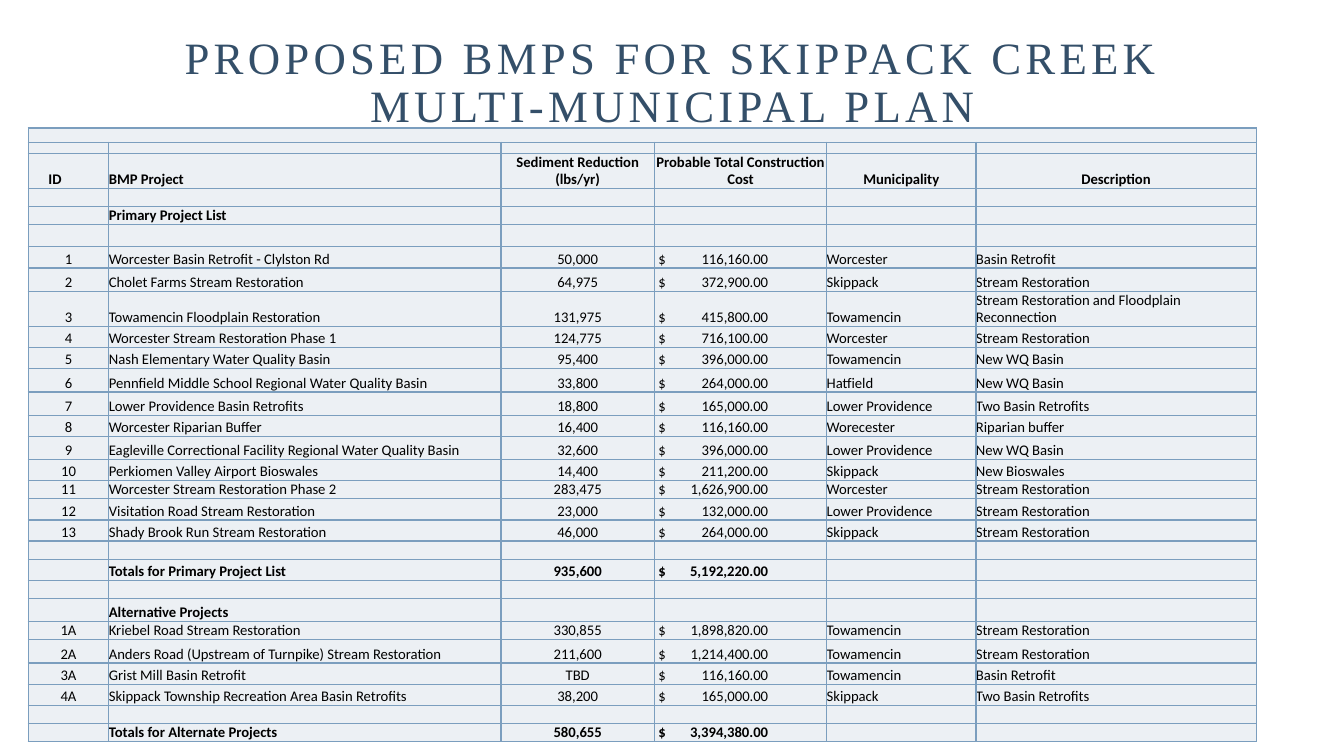
from lxml import etree
from pptx import Presentation
from pptx import util as u
from pptx.dml.color import RGBColor
from pptx.enum import text
from pptx.oxml import ns

COLORS = {"title": "344F69", "ink": "000000", "cell": "ECF0F4", "border": "7B9EBE"}
COLUMN_WIDTHS = [0.8, 3.89, 1.52, 1.71, 1.48, 2.78]
ID, PROJECT, SEDIMENT, COST, MUNICIPALITY, DESCRIPTION = range(6)
HEADER_ROW = 2

# Row height, then the texts of the row from the left
ROWS = [
    (0.14,),
    (0.11,),
    (0.35, "ID", "BMP Project", "Sediment Reduction (lbs/yr)",
     "Probable Total Construction Cost", "Municipality", "Description"),
    (0.18,),
    (0.18, "", "Primary Project List"),
    (0.22,),
    (0.21, "1", "Worcester Basin Retrofit - Clylston Rd", "50,000",
     "116,160.00", "Worcester", "Basin Retrofit"),
    (0.23, "2", "Cholet Farms Stream Restoration", "64,975",
     "372,900.00", "Skippack", "Stream Restoration"),
    (0.35, "3", "Towamencin Floodplain Restoration", "131,975",
     "415,800.00", "Towamencin", "Stream Restoration and Floodplain Reconnection"),
    (0.21, "4", "Worcester Stream Restoration Phase 1", "124,775",
     "716,100.00", "Worcester", "Stream Restoration"),
    (0.21, "5", "Nash Elementary Water Quality Basin", "95,400",
     "396,000.00", "Towamencin", "New WQ Basin"),
    (0.23, "6", "Pennfield Middle School Regional Water Quality Basin", "33,800",
     "264,000.00", "Hatfield", "New WQ Basin"),
    (0.23, "7", "Lower Providence Basin Retrofits", "18,800",
     "165,000.00", "Lower Providence", "Two Basin Retrofits"),
    (0.21, "8", "Worcester Riparian Buffer", "16,400",
     "116,160.00", "Worecester", "Riparian buffer"),
    (0.23, "9", "Eagleville Correctional Facility Regional Water Quality Basin",
     "32,600", "396,000.00", "Lower Providence", "New WQ Basin"),
    (0.21, "10", "Perkiomen Valley Airport Bioswales", "14,400",
     "211,200.00", "Skippack", "New Bioswales"),
    (0.18, "11", "Worcester Stream Restoration Phase 2", "283,475",
     "1,626,900.00", "Worcester", "Stream Restoration"),
    (0.21, "12", "Visitation Road Stream Restoration", "23,000",
     "132,000.00", "Lower Providence", "Stream Restoration"),
    (0.21, "13", "Shady Brook Run Stream Restoration", "46,000",
     "264,000.00", "Skippack", "Stream Restoration"),
    (0.18,),
    (0.21, "", "Totals for Primary Project List", "935,600", "5,192,220.00"),
    (0.18,),
    (0.23, "", "Alternative Projects"),
    (0.18, "1A", "Kriebel Road Stream Restoration", "330,855",
     "1,898,820.00", "Towamencin", "Stream Restoration"),
    (0.23, "2A", "Anders Road (Upstream of Turnpike) Stream Restoration", "211,600",
     "1,214,400.00", "Towamencin", "Stream Restoration"),
    (0.21, "3A", "Grist Mill Basin Retrofit", "TBD",
     "116,160.00", "Towamencin", "Basin Retrofit"),
    (0.21, "4A", "Skippack Township Recreation Area Basin Retrofits", "38,200",
     "165,000.00", "Skippack", "Two Basin Retrofits"),
    (0.18,),
    (0.18, "", "Totals for Alternate Projects", "580,655", "3,394,380.00"),
]


class ProjectPage:
    """Holds the slide and its style."""

    title_font, body_font = "Times New Roman", "Calibri"
    title_size, body_size, empty_size = 32, 10.5, 6

    def __init__(self, deck):
        self.page = deck.slides.add_slide(deck.slide_layouts[6])

    def set_font(self, para, name, size, color, bold=False):
        font = para.font
        font.name, font.size, font.bold = name, u.Pt(size), bold
        font.color.rgb = RGBColor.from_string(COLORS[color])

    def title(self, wording, left, top, width, height):
        box = self.page.shapes.add_textbox(*map(u.Inches, (left, top, width, height)))
        frame = box.text_frame
        frame.word_wrap = True
        frame.vertical_anchor = text.MSO_ANCHOR.BOTTOM
        para = frame.paragraphs[0]
        para.alignment = text.PP_ALIGN.CENTER
        para.line_spacing = 0.9
        span = para.add_run()
        span.text = wording
        span.font._element.set("spc", "300")
        self.set_font(para, self.title_font, self.title_size, "title")

    def table(self, rows, left, top):
        width, height = sum(COLUMN_WIDTHS), sum(row[0] for row in rows)
        frame = self.page.shapes.add_table(
            len(rows), len(COLUMN_WIDTHS), *map(u.Inches, (left, top, width, height)))
        grid = frame.table
        for column, column_width in zip(grid.columns, COLUMN_WIDTHS):
            column.width = u.Inches(column_width)
        grid.cell(0, ID).merge(grid.cell(0, DESCRIPTION))
        for r, (row_height, *wordings) in enumerate(rows):
            grid.rows[r].height = u.Inches(row_height)
            bold = r == HEADER_ROW or not any(wordings[:1])
            for c in range(len(COLUMN_WIDTHS)):
                wording = wordings[c] if c < len(wordings) else ""
                self.cell(grid.cell(r, c), wording, c, r == HEADER_ROW, bold)

    def cell(self, cell, wording, column, header, bold):
        cell.margin_left = cell.margin_right = cell.margin_top = cell.margin_bottom = 0
        cell.vertical_anchor = text.MSO_ANCHOR.BOTTOM
        self.borders(cell)
        cell.fill.solid()
        cell.fill.fore_color.rgb = RGBColor.from_string(COLORS["cell"])
        para = cell.text_frame.paragraphs[0]
        size = self.body_size if wording else self.empty_size
        self.set_font(para, self.body_font, size, "ink", bold)
        if not wording:
            para._p.get_or_add_endParaRPr().set("sz", str(size * 100))
            return
        if header and column == ID:
            cell.margin_left = u.Inches(0.2)
        elif column in (ID, SEDIMENT) or (header and column != PROJECT):
            para.alignment = text.PP_ALIGN.CENTER
        elif column == COST:
            cell.margin_left = u.Inches(0.04)
            self.right_tab(para, 1.09)
            wording = "$\t" + wording
        para.add_run().text = wording

    def right_tab(self, para, position):
        tabs = etree.Element(ns.qn("a:tabLst"))
        etree.SubElement(tabs, ns.qn("a:tab"), pos=str(u.Inches(position)), algn="r")
        para._p.get_or_add_pPr().find(ns.qn("a:defRPr")).addprevious(tabs)

    def borders(self, cell):
        properties = cell._tc.get_or_add_tcPr()
        for side in ("lnL", "lnR", "lnT", "lnB"):
            line = etree.SubElement(properties, ns.qn("a:" + side), w=str(u.Pt(1)))
            fill = etree.SubElement(line, ns.qn("a:solidFill"))
            etree.SubElement(fill, ns.qn("a:srgbClr"), val=COLORS["border"])


def main():
    deck = Presentation()
    deck.slide_width, deck.slide_height = u.Inches(13.33), u.Inches(7.5)
    page = ProjectPage(deck)
    page.title("PROPOSED BMPS FOR SKIPPACK CREEK MULTI-MUNICIPAL PLAN",
               1.48, 0.24, 10.38, 1.12)
    page.table(ROWS, 0.28, 1.27)
    deck.save("out.pptx")


if __name__ == "__main__":
    main()
